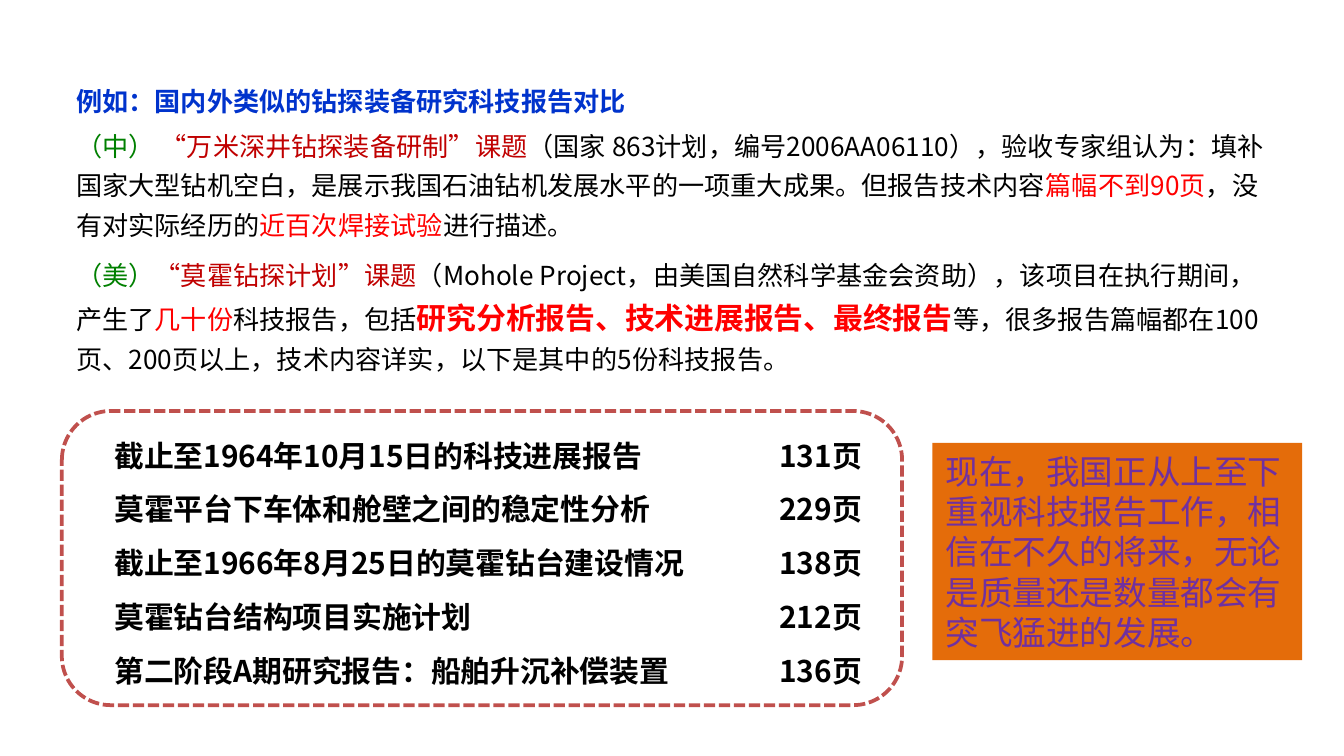
"""Build the slide comparing Chinese and American drilling research reports."""
from lxml import etree
from pptx import Presentation
from pptx.dml.color import RGBColor
from pptx.enum.dml import MSO_LINE
from pptx.enum.lang import MSO_LANGUAGE_ID
from pptx.enum.shapes import MSO_SHAPE
from pptx.enum.text import MSO_ANCHOR, PP_ALIGN
from pptx.oxml.ns import qn
from pptx.util import Cm, Pt

ROUNDED, RECTANGLE = MSO_SHAPE.ROUNDED_RECTANGLE, MSO_SHAPE.RECTANGLE
MIDDLE, LEFT = MSO_ANCHOR.MIDDLE, PP_ALIGN.LEFT
DASH = MSO_LINE.SQUARE_DOT
CHINESE = MSO_LANGUAGE_ID.SIMPLIFIED_CHINESE
PLAIN_TABLE = "{2D5ABB26-0587-4C30-8999-92F81FD0307C}"
SANS, SANS_JP = "Noto Sans CJK SC", "Noto Sans CJK JP"
SERIF, LATIN = "Times New Roman", "Calibri"
COLORS = {
    "black": "000000",
    "blue": "0033CC",
    "green": "008000",
    "crimson": "C00000",
    "red": "FF0000",
    "frame": "C0504D",
    "orange": "E46C0A",
    "purple": "7030A0",
}


def color(name):
    return RGBColor.from_string(COLORS[name])


def add_run(paragraph, text, color_name="black", font_name=SANS, size=14, bold=False):
    run = paragraph.add_run()
    run.text = text
    run.font.name = font_name
    east_asian = etree.SubElement(run.font._element, qn("a:ea"))
    east_asian.set("typeface", SANS_JP if font_name == SANS_JP else SANS)
    run.font.size = Pt(size)
    run.font.bold = bold
    run.font.language_id = CHINESE
    run.font.color.rgb = color(color_name)


prs = Presentation()
prs.slide_width, prs.slide_height = Cm(25.4), Cm(14.29)
slide = prs.slides.add_slide(prs.slide_layouts[6])

comparison = [
    (0, 0, [("例如：国内外类似的钻探装备研究科技报告对比", "blue", SANS, 14, True)]),
    (3, 0, [
        ("（中） ", "green", SERIF),
        ("“", "crimson", LATIN),
        ("万米深井钻探装备研制", "crimson", SERIF),
        ("”", "crimson", LATIN),
        ("课题", "crimson", SERIF),
        ("（国家 863计划，编号2006AA06110）",),
        ("，", "black", SERIF),
        ("验收专家组认为：填补国家大型钻机空白，是展示我国石油钻机发展水平的一项重大成果。但报告技术内容",),
        ("篇幅不到90页", "red"),
        ("，没有对实际经历的",),
        ("近百次焊接试验", "red"),
        ("进行描述。",),
    ]),
    (6, 6, [
        ("（美）", "green", SERIF),
        ("“", "crimson", LATIN),
        ("莫霍钻探计划", "crimson", SERIF),
        ("”", "crimson", LATIN),
        ("课题", "crimson", SERIF),
        ("（Mohole Project，由美国自然科学基金会资助）",),
        ("，", "black", SERIF),
        ("该项目在执行期间，产生了",),
        ("几十份", "red"),
        ("科技报告，包括",),
        ("研究分析报告、技术进展报告、最终报告", "red", SANS_JP, 16, True),
        ("等，很多报告篇幅都在100页、200页以上，技术内容详实，以下是其中的5份科技报告。",),
    ]),
]
body = slide.shapes.add_textbox(Cm(1.19), Cm(1.35), Cm(23.22), Cm(5.94)).text_frame
body.word_wrap = True
for index, (before, after, runs) in enumerate(comparison):
    paragraph = body.add_paragraph() if index else body.paragraphs[0]
    paragraph.line_spacing = 1.25
    paragraph.space_before, paragraph.space_after = Pt(before), Pt(after)
    for run_values in runs:
        add_run(paragraph, *run_values)

reports = [
    ("截止至1964年10月15日的科技进展报告", "131页"),
    ("莫霍平台下车体和舱壁之间的稳定性分析", "229页"),
    ("截止至1966年8月25日的莫霍钻台建设情况", "138页"),
    ("莫霍钻台结构项目实施计划", "212页"),
    ("第二阶段A期研究报告：船舶升沉补偿装置", "136页"),
]
report_table = slide.shapes.add_table(
    len(reports), 2, Cm(2.16), Cm(7.77), Cm(15.29), Cm(5)).table
report_table.first_row = report_table.horz_banding = False
report_table._tbl.tblPr.find(qn("a:tableStyleId")).text = PLAIN_TABLE
for column, width in zip(report_table.columns, (12.57, 2.72)):
    column.width = Cm(width)
for row, report in zip(report_table.rows, reports):
    for cell, text in zip(row.cells, report):
        cell.fill.background()
        cell.vertical_anchor = MIDDLE
        cell.margin_left = cell.margin_right = cell.margin_top = cell.margin_bottom = 0
        paragraph = cell.text_frame.paragraphs[0]
        paragraph.line_spacing = 1.5
        add_run(paragraph, text, size=16, bold=True)

report_frame = slide.shapes.add_shape(ROUNDED, Cm(1.17), Cm(7.77), Cm(15.88), Cm(5.56))
report_frame.shadow.inherit = False
report_frame.fill.background()
report_frame.line.color.rgb = color("frame")
report_frame.line.width = Pt(2)
report_frame.line.dash_style = DASH

outlook = slide.shapes.add_shape(RECTANGLE, Cm(17.62), Cm(8.37), Cm(6.99), Cm(4.11))
outlook.shadow.inherit = False
outlook.fill.solid()
outlook.fill.fore_color.rgb = color("orange")
outlook.line.fill.background()
outlook.text_frame.word_wrap = True
outlook_paragraph = outlook.text_frame.paragraphs[0]
outlook_paragraph.alignment = LEFT
add_run(outlook_paragraph,
        "现在，我国正从上至下重视科技报告工作，相信在不久的将来，无论是质量还是数量都会有突飞猛进的发展。",
        "purple", size=18)

prs.save("out.pptx")
